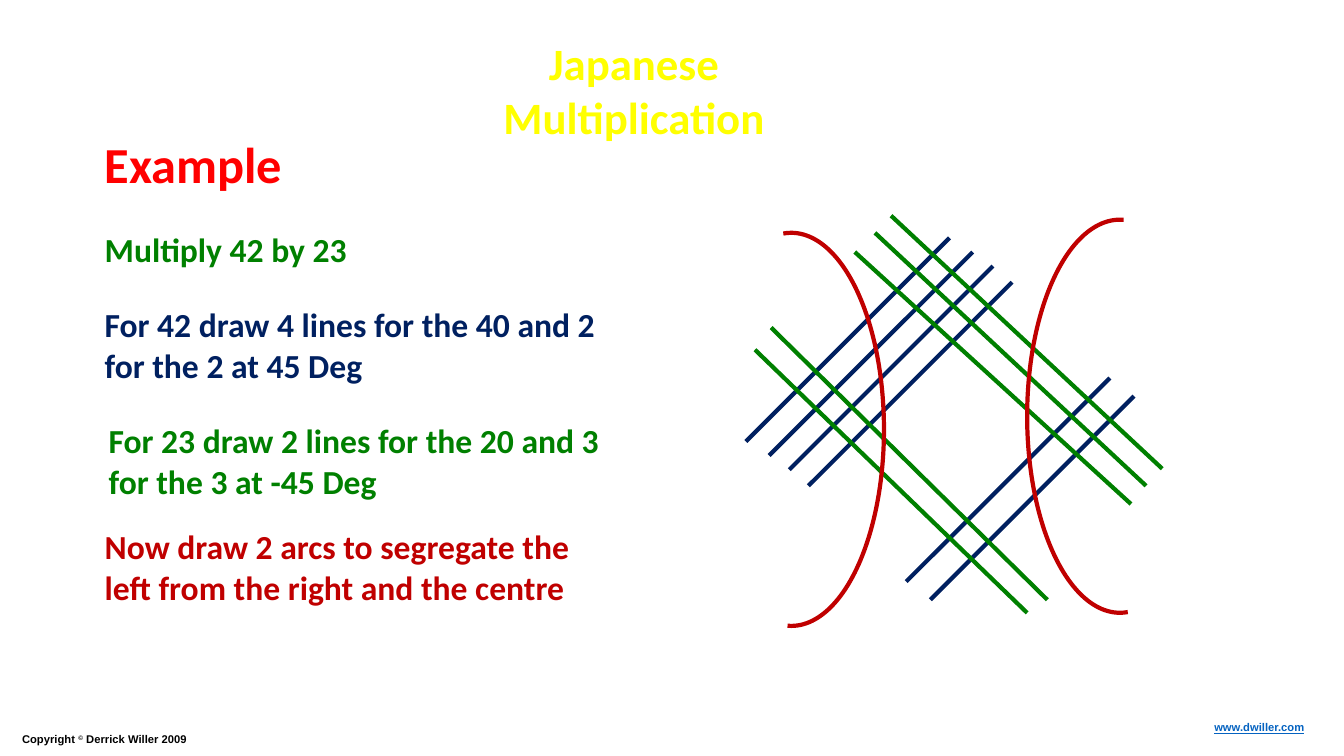
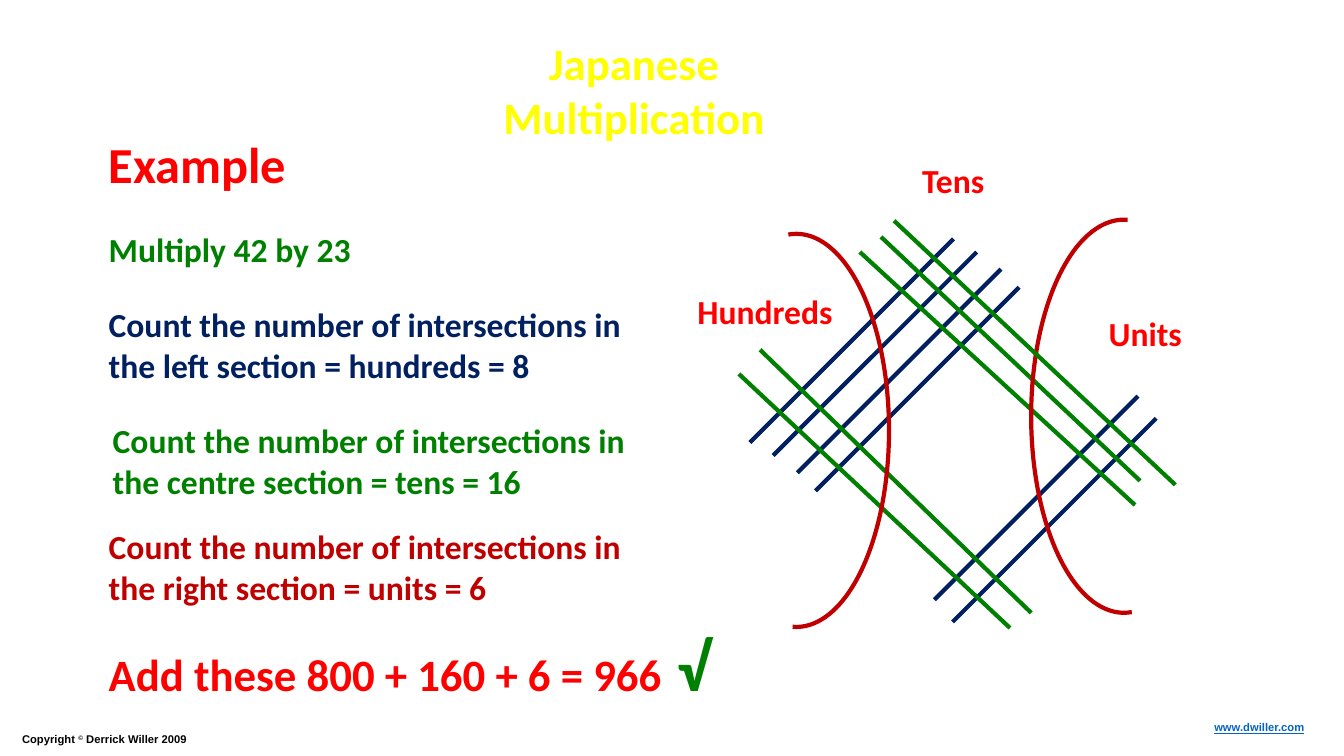
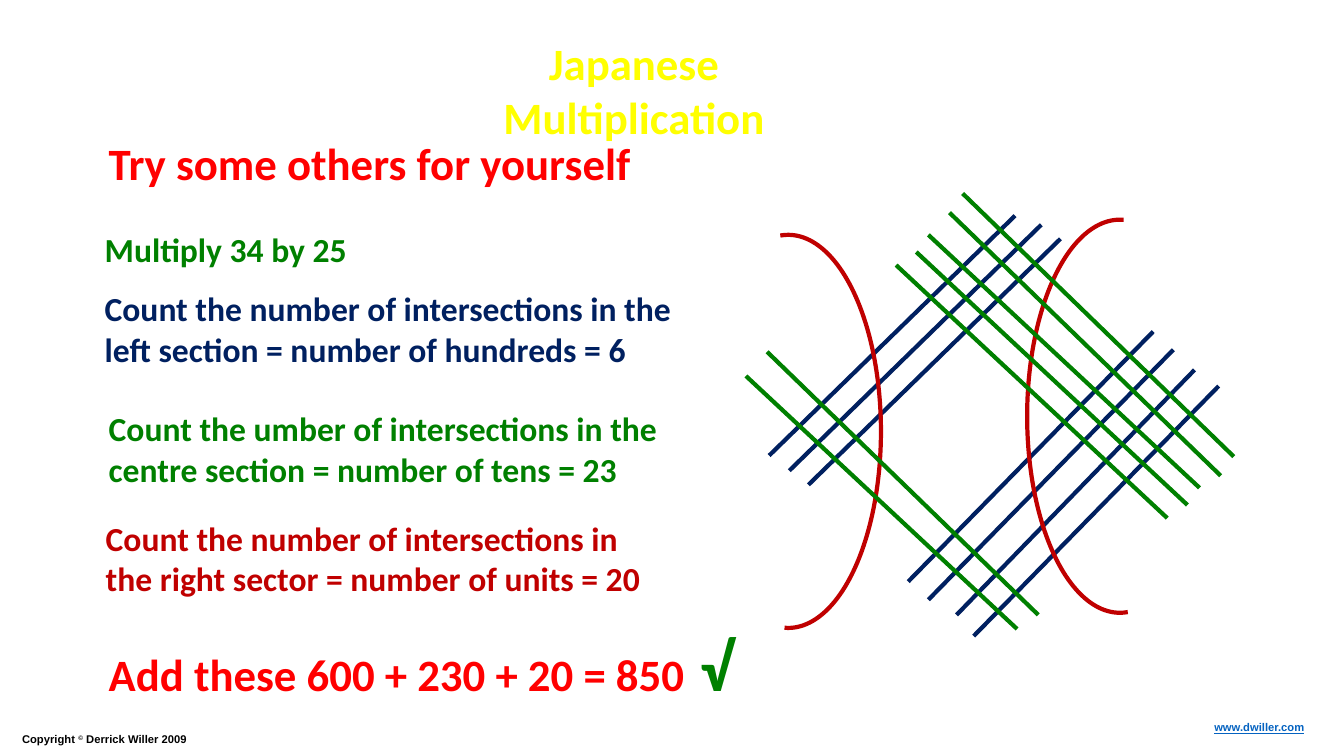
from collections.abc import Callable
from dataclasses import dataclass
from typing import NamedTuple

from lxml.etree import SubElement
from pptx import Presentation
from pptx.dml.color import RGBColor
from pptx.enum.shapes import MSO_CONNECTOR as Connector, MSO_SHAPE as Preset
from pptx.enum.text import MSO_AUTO_SIZE as AutoSize, PP_ALIGN as Align
from pptx.oxml import parse_xml
from pptx.oxml.ns import nsdecls, qn
from pptx.slide import Slide
from pptx.util import Inches, Pt

CELL = 0.1
COLUMNS, ROWS = 133.33, 75
YELLOW, ORANGE, RED, GREEN = "FFFF00", "ED7D31", "FF0000", "008000"
NAVY, CRIMSON, BLACK, LINK = "002060", "C00000", "000000", "0563C1"
STROKE = 3
ARC_ANGLES = (160.613, 54.647)
ARC_WIDTH, ARC_HEIGHT = 18.4, 39


class Span(NamedTuple):
    text: str
    colour: str
    size: float = 24
    font: str = "Calibri"
    underline: bool = False
    baseline: int = 0
    outline: str = ""


@dataclass(frozen=True)
class Label:
    col: float
    row: float
    width: float
    height: float
    spans: tuple[Span, ...]
    wrap: bool = True
    align: Align = Align.LEFT


@dataclass(frozen=True)
class Bundle:
    colour: str
    run: tuple[float, float]
    starts: tuple[tuple[float, float], ...]


@dataclass(frozen=True)
class Arc:
    col: float
    row: float
    flipped: bool = False


Item = Label | Bundle | Arc


def grid(cells: float) -> int:
    return Inches(round(cells * CELL, 3))


def colour(value: str) -> RGBColor:
    return RGBColor.from_string(value)


def draw_label(page: Slide, label: Label) -> None:
    box = page.shapes.add_textbox(*map(grid, (label.col, label.row, label.width, label.height)))
    frame = box.text_frame
    frame.word_wrap = label.wrap
    frame.auto_size = AutoSize.SHAPE_TO_FIT_TEXT
    para = frame.paragraphs[0]
    para.alignment = label.align
    for span in label.spans:
        run = para.add_run()
        run.text = span.text
        formats = {"name": span.font, "size": Pt(span.size), "bold": True,
                   "underline": span.underline or None}
        for name, value in formats.items():
            setattr(run.font, name, value)
        run.font.color.rgb = colour(span.colour)
        properties = run._r.get_or_add_rPr()
        if span.baseline:
            properties.set("baseline", str(span.baseline))
        if span.outline:
            properties.insert(0, parse_xml(
                f'<a:ln {nsdecls("a")} w="{Pt(1.75)}"><a:solidFill>'
                f'<a:srgbClr val="{span.outline}"/></a:solidFill></a:ln>'))


def draw_bundle(page: Slide, bundle: Bundle) -> None:
    across, down = bundle.run
    for col, row in bundle.starts:
        ends = map(grid, (col, row, col + across, row + down))
        stroke = page.shapes.add_connector(Connector.STRAIGHT, *ends)
        stroke.line.color.rgb = colour(bundle.colour)
        stroke.line.width = Pt(STROKE)
        SubElement(stroke._element.spPr, qn("a:effectLst"))


def draw_arc(page: Slide, arc: Arc) -> None:
    curve = page.shapes.add_shape(
        Preset.ARC, *map(grid, (arc.col, arc.row, ARC_WIDTH, ARC_HEIGHT)))
    for index, angle in enumerate(ARC_ANGLES):
        curve.adjustments[index] = angle
    if arc.flipped:
        for flip in ("flipH", "flipV"):
            curve._element.spPr.xfrm.set(flip, "1")
    curve.fill.background()
    curve.line.color.rgb = colour(CRIMSON)
    curve.line.width = Pt(STROKE)
    curve.shadow.inherit = False


DRAW: dict[type, Callable] = {Label: draw_label, Bundle: draw_bundle, Arc: draw_arc}


def heading(col: float) -> Label:
    return Label(col, 12.7, 19.8, 7.1, (Span("Example", RED, 36),), wrap=False)


def short(col: float, row: float, width: float, text: str, ink: str) -> Label:
    return Label(col, row, width, 5, (Span(text, ink),), wrap=False)


def step(col: float, row: float, width: float, text: str, ink: str) -> Label:
    return Label(col, row, width, 9.1, (Span(text, ink),))


def total(width: float, text: str) -> Label:
    return Label(9.8, 61.4, width, 9.1, (Span(text, RED, 32), Span(" √", GREEN, 48)))


SHARED: tuple[Item, ...] = (
    Label(41.4, 3.1, 43, 6.4,
          (Span("Japanese Multiplication", YELLOW, 32, outline=ORANGE),), align=Align.CENTER),
    Label(1.2, 72.2, 56.5, 2.4, (
        Span("Copyright ", BLACK, 8, "Arial"),
        Span("©", BLACK, 8, "Arial", baseline=30000),
        Span(" Derrick Willer 2009", BLACK, 8, "Arial"))),
    Label(117, 71, 13.4, 2.4,
          (Span("www.dwiller.com", LINK, 8, "Arial", underline=True),), align=Align.RIGHT),
)

DRAWING_STEPS: tuple[Item, ...] = (
    heading(9.4),
    short(9.4, 22.2, 26.3, "Multiply 42 by 23", GREEN),
    step(9.4, 29.7, 55.3, "For 42 draw 4 lines for the 40 and 2 for the 2 at 45 Deg", NAVY),
    Bundle(NAVY, (-20.2, 20.2), (
        (94.2, 23.6), (96.5, 25), (98.5, 26.4), (100.4, 28), (110.1, 37.5), (112.5, 39.3))),
    step(9.8, 41.2, 53.3, "For 23 draw 2 lines for the 20 and 3 for the 3 at -45 Deg", GREEN),
    Bundle(GREEN, (26.9, 25.1), ((86.8, 23.1), (88.4, 21.4))),
    Bundle(GREEN, (27.4, 25), ((84.8, 25),)),
    Bundle(GREEN, (27.4, 27), ((76.5, 32.5),)),
    Bundle(GREEN, (27, 26.1), ((74.9, 34.7),)),
    step(9.4, 51.7, 53.2,
         "Now draw 2 arcs to segregate the left from the right and the centre", CRIMSON),
    Arc(69.3, 23.1),
    Arc(101.9, 21.8, flipped=True),
)

COUNTING_STEPS: tuple[Item, ...] = (
    total(62.9, "Add these 800 + 160 + 6 = 966"),
    heading(9.8),
    short(9.8, 22.2, 26.3, "Multiply 42 by 23", GREEN),
    step(9.8, 29.7, 55.3,
         "Count the number of intersections in the left section = hundreds = 8", NAVY),
    Bundle(NAVY, (-20.2, 20.2), (
        (94.6, 23.7), (96.9, 25), (99.3, 26.7), (101.1, 28.5), (112.9, 39.3), (114.7, 41.5))),
    step(10.2, 41.2, 53.3,
         "Count the number of intersections in the centre section = tens = 16", GREEN),
    Bundle(GREEN, (25.7, 24.2), ((87.4, 23.5),)),
    Bundle(GREEN, (27.3, 25.1), ((85.3, 25),)),
    Bundle(GREEN, (26.9, 25.2), ((73.3, 37.1),)),
    Bundle(GREEN, (26.9, 26.1), ((75.4, 34.7),)),
    step(9.8, 51.7, 53.2,
         "Count the number of intersections in the right section = units = 6", CRIMSON),
    Arc(69.8, 23.2),
    Arc(102.3, 21.8, flipped=True),
    Bundle(GREEN, (27.9, 26.2), ((88.7, 21.9),)),
    short(68.2, 28.4, 15.6, "Hundreds", RED),
    short(90.5, 15.4, 8.2, "Tens", RED),
    short(109, 30.6, 9.4, "Units", RED),
)

PRACTICE_STEPS: tuple[Item, ...] = (
    total(65.1, "Add these 600 + 230 + 20 = 850"),
    short(9.4, 22.2, 26.3, "Multiply 34 by 25", GREEN),
    step(9.4, 28.1, 60.6,
         "Count the number of intersections in the left section = number of hundreds = 6", NAVY),
    Bundle(NAVY, (-24.4, 23.8), ((100.7, 21.4),)),
    Bundle(NAVY, (-25, 24.4), ((103.3, 22.3), (105.2, 23.7))),
    Bundle(NAVY, (-24.3, 24.8), ((114.4, 32.9), (116.4, 34.7), (120.9, 38.3))),
    Bundle(NAVY, (-23.6, 24.3), ((118.5, 36.7),)),
    step(9.8, 40, 58.1,
         "Count the umber of intersections in the centre section = number of tens = 23", GREEN),
    step(9.5, 50.9, 58.1,
         "Count the number of intersections in the right sector = number of units = 20", CRIMSON),
    Arc(69, 23.3),
    Arc(101.9, 21.8, flipped=True),
    Bundle(GREEN, (26.9, 25.1), ((74, 37.3), (88.9, 26.3), (92.1, 23.3), (90.9, 25))),
    Bundle(GREEN, (26.9, 26.1), ((76.1, 34.9), (95.5, 19.2), (94.2, 21.1))),
    Label(9.8, 13, 58.1, 6.4, (Span("Try some others for yourself", RED, 32),)),
)


def main() -> None:
    deck = Presentation()
    deck.slide_width, deck.slide_height = grid(COLUMNS), grid(ROWS)
    blank = deck.slide_layouts[6]
    for items in (DRAWING_STEPS, COUNTING_STEPS, PRACTICE_STEPS):
        page = deck.slides.add_slide(blank)
        for item in SHARED + items:
            DRAW[type(item)](page, item)
    deck.save("out.pptx")


if __name__ == "__main__":
    main()
